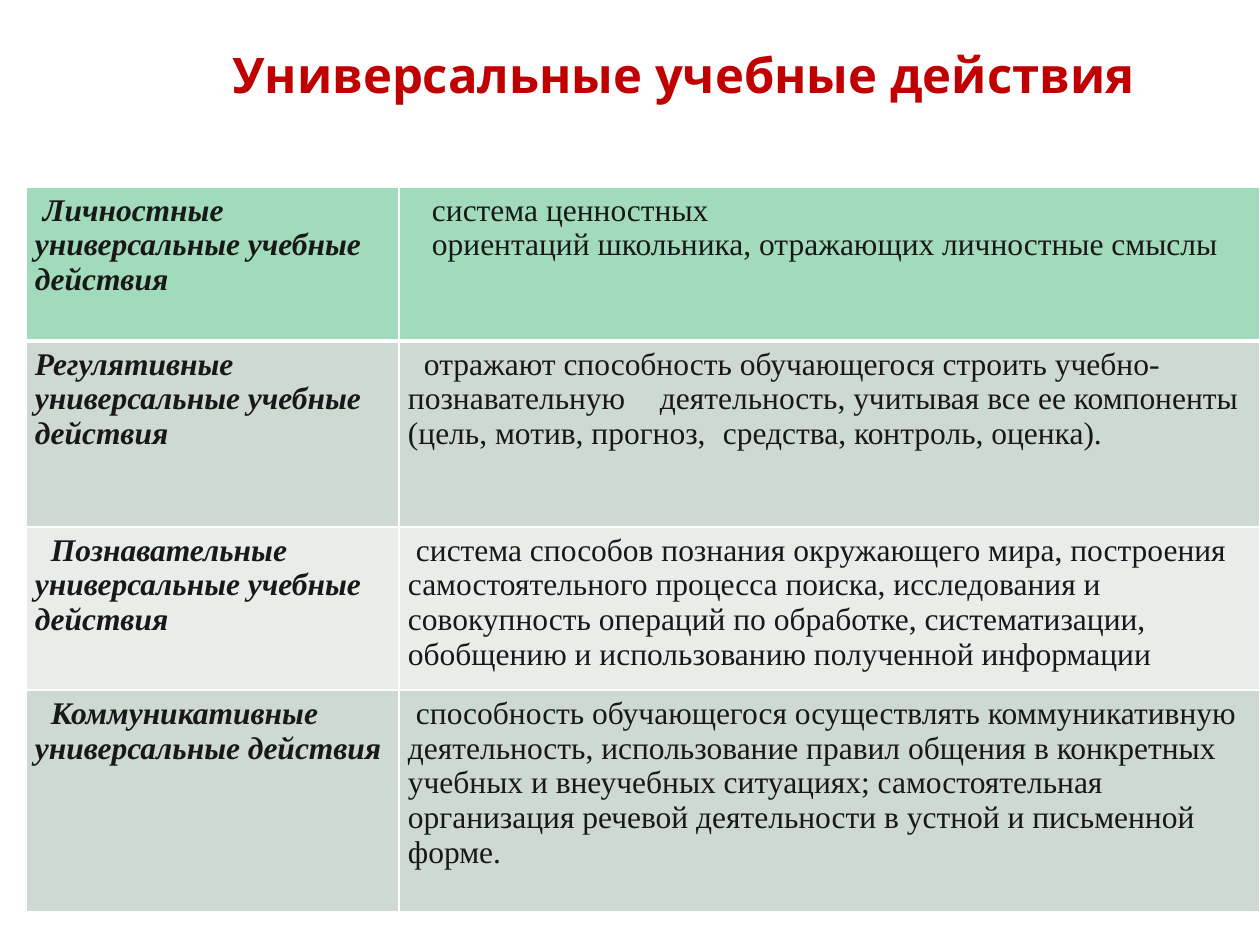
import pptx
import pptx.dml.color
import pptx.enum.text
import pptx.oxml
import pptx.oxml.ns
import pptx.util

EMU_PER_PX = 914400 / 126


def px(length):
    return pptx.util.Emu(round(length * EMU_PER_PX))


def color(value):
    return pptx.dml.color.RGBColor.from_string(value)


class SlideBuilder:
    title_font = "League Spartan"
    body_font = "Times New Roman"
    title_color = "C00000"
    body_color = "181818"
    border_color = "FFFFFF"

    def __init__(self, slide):
        self.slide = slide

    def text_run(self, para, text, font, size, ink, bold=False, italic=False):
        span = para.add_run()
        span.text = text
        span.font.name = font
        span.font.size = pptx.util.Pt(size)
        span.font.color.rgb = color(ink)
        span.font.bold = bold
        span.font.italic = italic

    def title(self, left, top, width, height, text):
        box = self.slide.shapes.add_textbox(px(left), px(top), px(width), px(height))
        frame = box.text_frame
        frame.word_wrap = True
        frame.vertical_anchor = pptx.enum.text.MSO_ANCHOR.MIDDLE
        para = frame.paragraphs[0]
        para.line_spacing = 0.9
        self.text_run(para, text, self.title_font, 28, self.title_color, bold=True)

    def indent(self, para, margin, first_line, tabs):
        properties = para._p.get_or_add_pPr()
        properties.set("marL", str(px(margin)))
        properties.set("indent", str(px(first_line)))
        if tabs:
            stops = pptx.oxml.ns.qn("a:tabLst")
            tab_list = properties.makeelement(stops, {})
            for position in tabs:
                stop = tab_list.makeelement(pptx.oxml.ns.qn("a:tab"), {"pos": str(px(position)), "algn": "l"})
                tab_list.append(stop)
            properties.append(tab_list)

    def borders(self, cell, bottom_width):
        properties = cell._tc.get_or_add_tcPr()
        widths = {"lnL": 1, "lnR": 1, "lnT": 1, "lnB": bottom_width}
        for index, (side, width) in enumerate(widths.items()):
            line = pptx.oxml.parse_xml(
                f'<a:{side} {pptx.oxml.ns.nsdecls("a")} w="{pptx.util.Pt(width)}">'
                f'<a:solidFill><a:srgbClr val="{self.border_color}"/></a:solidFill></a:{side}>'
            )
            properties.insert(index, line)

    def cell(self, cell, paragraphs, fill, emphasis, bottom_width):
        cell.fill.solid()
        cell.fill.fore_color.rgb = color(fill)
        cell.margin_left = cell.margin_right = px(9)
        cell.margin_top = cell.margin_bottom = px(6)
        for index, (text, margin, first_line, tabs) in enumerate(paragraphs):
            frame = cell.text_frame
            para = frame.add_paragraph() if index else frame.paragraphs[0]
            self.indent(para, margin, first_line, tabs)
            self.text_run(para, text, self.body_font, 18, self.body_color, emphasis, emphasis)
        self.borders(cell, bottom_width)

    def table(self, left, top, widths, rows):
        heights = [row[0] for row in rows]
        frame = self.slide.shapes.add_table(
            len(rows), len(widths), px(left), px(top), px(sum(widths)), px(sum(heights))
        )
        table = frame.table
        for column, width in zip(table.columns, widths):
            column.width = px(width)
        for row_index, (height, fill, *contents) in enumerate(rows):
            table.rows[row_index].height = px(height)
            for column_index, paragraphs in enumerate(contents):
                self.cell(
                    table.cell(row_index, column_index), paragraphs, fill,
                    emphasis=column_index == 0, bottom_width=1 if row_index else 3,
                )


def main():
    deck = pptx.Presentation()
    deck.slide_width, deck.slide_height = px(1260), px(945)
    builder = SlideBuilder(deck.slides.add_slide(deck.slide_layouts[6]))
    builder.title(220, 26, 1036, 103, "Универсальные учебные действия")
    rows = [
        (
            154, "A1DBBB",
            [("Личностные универсальные учебные действия", 0, 8, ())],
            [
                ("система ценностных", 24, 0, ()),
                ("ориентаций школьника, отражающих личностные смыслы", 24, 0, ()),
            ],
        ),
        (
            186, "CED9D1",
            [("Регулятивные", 0, 0, ()), ("универсальные учебные действия", 0, 0, ())],
            [(
                "отражают способность обучающегося строить учебно-познавательную\t"
                "деятельность, учитывая все ее компоненты (цель, мотив, прогноз,\t"
                "средства, контроль, оценка).", 0, 16, (367, 509),
            )],
        ),
        (
            154, "E8EDEA",
            [("Познавательные универсальные учебные действия", 0, 16, ())],
            [(
                "система способов познания окружающего мира, построения "
                "самостоятельного процесса поиска, исследования и совокупность операций "
                "по обработке, систематизации, обобщению и использованию полученной "
                "информации", 0, 8, (),
            )],
        ),
        (
            222, "CED9D1",
            [("Коммуникативные универсальные действия", 0, 16, ())],
            [(
                "способность обучающегося осуществлять коммуникативную деятельность, "
                "использование правил общения в конкретных учебных и внеучебных "
                "ситуациях; самостоятельная организация речевой деятельности в устной "
                "и письменной форме.", 0, 8, (),
            )],
        ),
    ]
    builder.table(26, 187, (373, 861), rows)
    deck.save("out.pptx")


if __name__ == "__main__":
    main()
